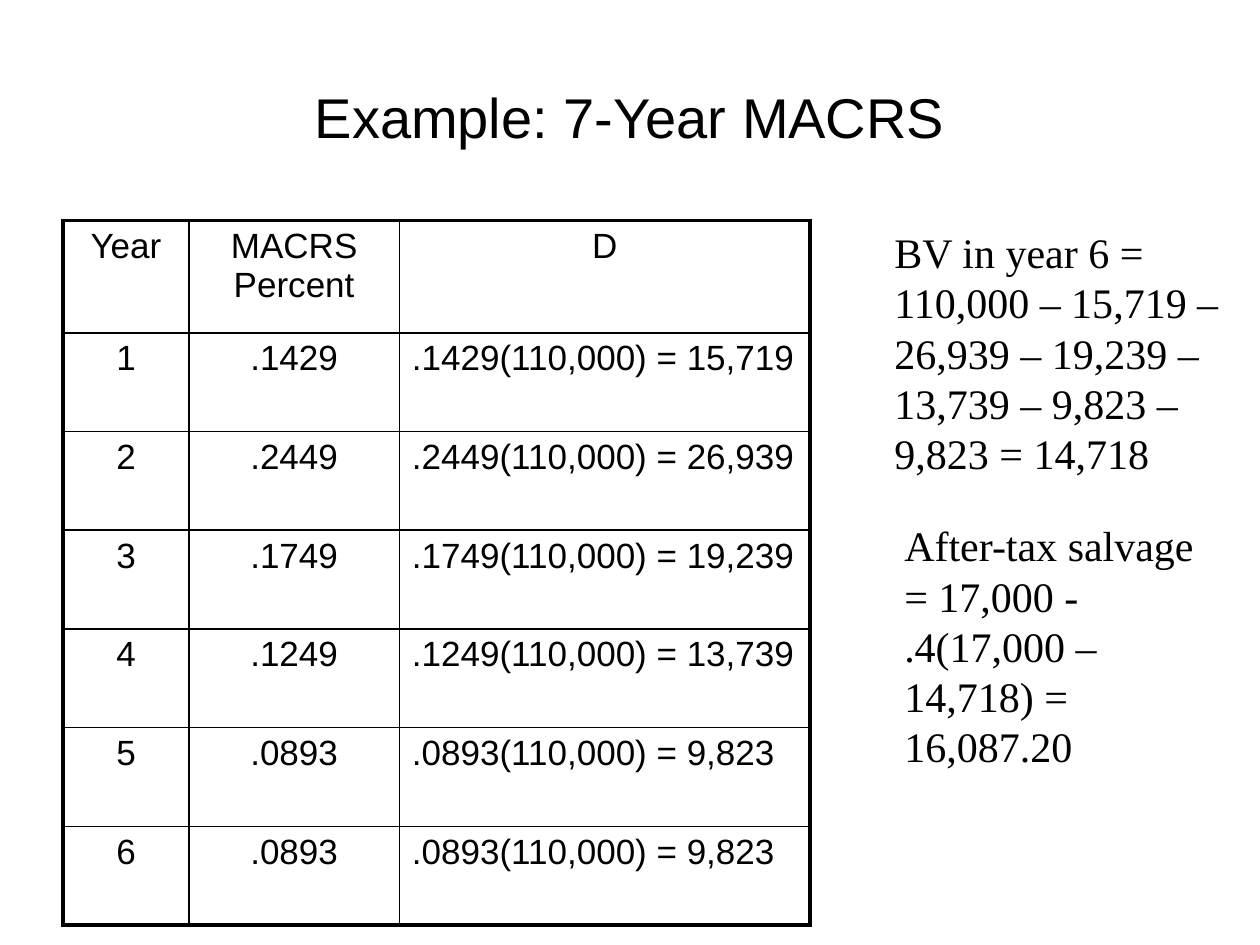
from dataclasses import dataclass

from lxml.etree import SubElement
from pptx import Presentation
from pptx.dml.color import RGBColor
from pptx.enum.text import MSO_ANCHOR as Anchor, PP_ALIGN as Align
from pptx.oxml.ns import qn
from pptx.util import Cm, Pt


@dataclass(frozen=True)
class Theme:
    ink: str = "000000"
    sans: str = "Arial"
    serif: str = "Times New Roman"
    title_size: float = 32
    table_size: float = 20
    note_size: float = 24
    note_leading: float = 28.7
    outer_border: float = 2.25
    inner_border: float = 1


THEME = Theme()

TITLE = "Example: 7-Year MACRS"
HEADER = ("Year", "MACRS Percent", "D")
SCHEDULE = [
    ("1", ".1429", "15,719"),
    ("2", ".2449", "26,939"),
    ("3", ".1749", "19,239"),
    ("4", ".1249", "13,739"),
    ("5", ".0893", "9,823"),
    ("6", ".0893", "9,823"),
]
COST = "110,000"
# text, left, top, width, height in cm
NOTES = [
    ("BV in year 6 = 110,000 – 15,719 – 26,939 – 19,239 – 13,739 – 9,823 – 9,823 = 14,718",
     17.78, 4.45, 7.19, 5.33),
    ("After-tax salvage = 17,000 - .4(17,000 – 14,718) = 16,087.20",
     17.98, 10.36, 6.55, 5.33),
]

TABLE_LEFT, TABLE_TOP = 1.27, 4.45
COLUMN_WIDTHS = (2.54, 4.24, 8.28)
HEADER_HEIGHT, ROW_HEIGHT = 2.26, 1.99


def write(frame, text, font=THEME.sans, size=THEME.table_size, align=Align.LEFT, leading=None):
    para = frame.paragraphs[0]
    para.alignment = align
    if leading:
        para.line_spacing = Pt(leading)
    span = para.add_run()
    span.text = text
    span.font.name = font
    span.font.size = Pt(size)
    span.font.color.rgb = RGBColor.from_string(THEME.ink)


def add_text(page, text, left, top, width, height, anchor=Anchor.TOP, **text_format):
    box = page.shapes.add_textbox(Cm(left), Cm(top), Cm(width), Cm(height))
    frame = box.text_frame
    frame.word_wrap = True
    frame.vertical_anchor = anchor
    write(frame, text, **text_format)


def set_borders(cell, outer_sides):
    """Draw all four borders, heavier on the sides along the table's edge."""
    properties = cell._tc.get_or_add_tcPr()
    for side in "LRTB":
        width = THEME.outer_border if side in outer_sides else THEME.inner_border
        line = SubElement(properties, qn(f"a:ln{side}"), w=str(Pt(width)))
        fill = SubElement(line, qn("a:solidFill"))
        SubElement(fill, qn("a:srgbClr"), val=THEME.ink)


def add_schedule(page):
    rows = [HEADER] + [
        (year, rate, f"{rate}({COST}) = {amount}") for year, rate, amount in SCHEDULE
    ]
    heights = [HEADER_HEIGHT] + [ROW_HEIGHT] * len(SCHEDULE)
    last_row, last_column = len(rows) - 1, len(HEADER) - 1
    table = page.shapes.add_table(
        len(rows), len(HEADER), Cm(TABLE_LEFT), Cm(TABLE_TOP),
        Cm(sum(COLUMN_WIDTHS)), Cm(sum(heights)),
    ).table
    table.first_row = table.horz_banding = False
    for column, width in zip(table.columns, COLUMN_WIDTHS):
        column.width = Cm(width)
    for row, height in zip(table.rows, heights):
        row.height = Cm(height)

    for r, texts in enumerate(rows):
        for c, text in enumerate(texts):
            cell = table.cell(r, c)
            is_formula = r > 0 and c == last_column
            write(cell.text_frame, text, align=Align.LEFT if is_formula else Align.CENTER)
            edges = {"L": c == 0, "R": c == last_column, "T": r == 0, "B": r == last_row}
            set_borders(cell, [side for side, is_outer in edges.items() if is_outer])
            cell.fill.background()


def main():
    deck = Presentation()
    deck.slide_width, deck.slide_height = Cm(25.4), Cm(19.05)
    page = deck.slides.add_slide(deck.slide_layouts[6])
    add_text(page, TITLE, 1.27, 0.76, 22.86, 3.18, anchor=Anchor.MIDDLE,
             size=THEME.title_size, align=Align.CENTER)
    add_schedule(page)
    for text, *place in NOTES:
        add_text(page, text, *place, font=THEME.serif, size=THEME.note_size,
                 leading=THEME.note_leading)
    deck.save("out.pptx")


if __name__ == "__main__":
    main()
